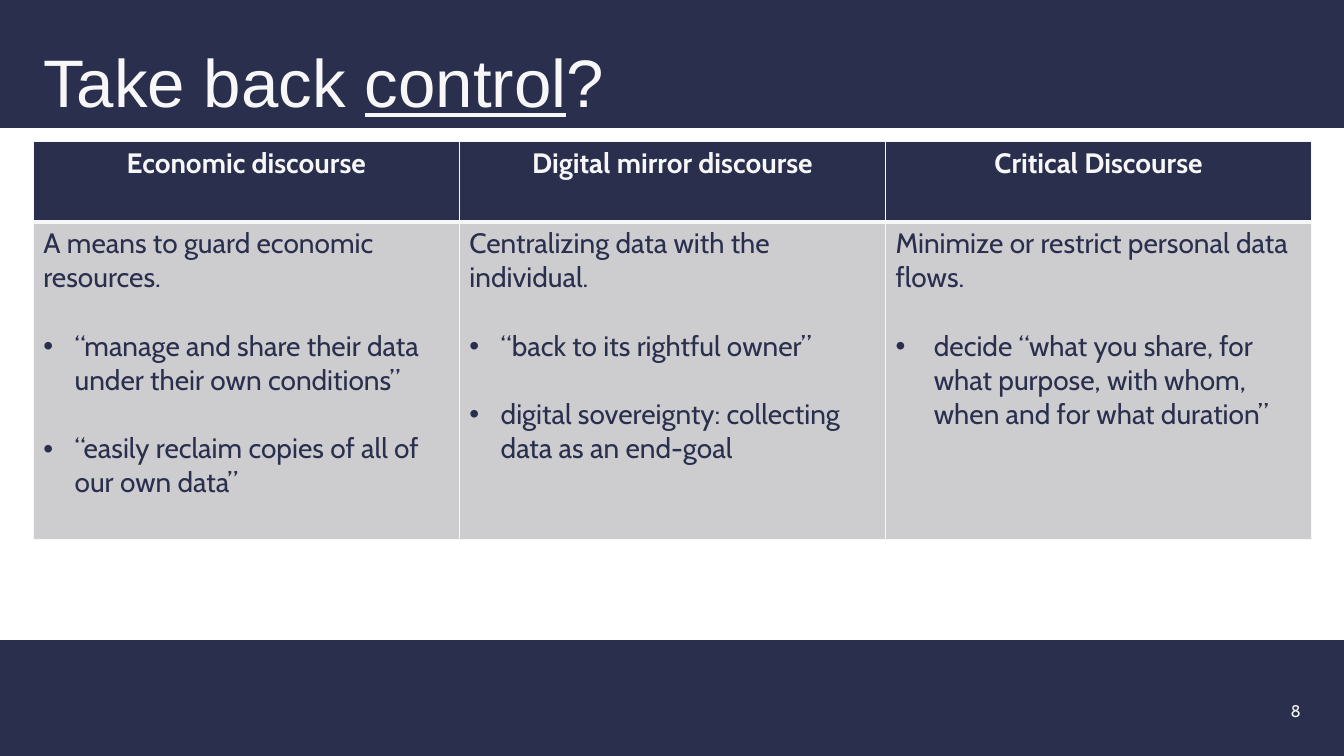
from lxml import etree
from pptx import Presentation
from pptx.dml.color import RGBColor
from pptx.enum.shapes import MSO_SHAPE as Shape
from pptx.enum.text import MSO_ANCHOR as Anchor, MSO_AUTO_SIZE as AutoSize, PP_ALIGN as Align
from pptx.oxml.ns import qn
from pptx.util import Inches, Pt

COLOURS = {"navy": "292F4D", "light": "F7F7F7", "grey": "CDCDD0"}
WIDTH, HEIGHT = 13.33, 7.5
DISCOURSES = [
    ("Economic discourse", "A means to guard economic resources.", 0.31,
     ["“manage and share their data under their own conditions”",
      "“easily reclaim copies of all of our own data”"]),
    ("Digital mirror discourse", "Centralizing data with the individual.", 0.31,
     ["“back to its rightful owner”",
      "digital sovereignty: collecting data as an end-goal"]),
    ("Critical Discourse", "Minimize or restrict personal data flows.", 0.38,
     ["decide “what you share, for what purpose, with whom, when and for what duration”"]),
]


def colour(name):
    return RGBColor.from_string(COLOURS[name])


def style_font(para, size, tint, name="Cabin", bold=False):
    font = para.font
    font.name, font.size, font.bold = name, Pt(size), bold
    font.color.rgb = colour(tint)


def place(box, left, top, width, height):
    box.left, box.top = Inches(left), Inches(top)
    box.width, box.height = Inches(width), Inches(height)


def add_band(page, top, height):
    band = page.shapes.add_shape(
        Shape.RECTANGLE, 0, Inches(top), Inches(WIDTH), Inches(height))
    band.shadow.inherit = False
    band.fill.solid()
    band.fill.fore_color.rgb = colour("navy")
    band.line.fill.background()


def add_title(page):
    title = page.shapes.title
    title._element.getparent().append(title._element)
    place(title, 0.33, 0.19, 12.09, 1.07)
    frame = title.text_frame
    frame.auto_size = AutoSize.NONE
    frame.word_wrap = True
    frame.vertical_anchor = Anchor.BOTTOM
    para = frame.paragraphs[0]
    para.alignment = Align.LEFT
    para.line_spacing = 0.9
    style_font(para, 48, "light", "Arial")
    for text, underlined in [("Take back ", False), ("control", True), ("?", False)]:
        span = para.add_run()
        span.text = text
        span.font.underline = underlined


def add_page_number(page, number):
    box = page.shapes.add_textbox(
        Inches(12.3), Inches(6.78), Inches(0.7), Inches(0.42))
    frame = box.text_frame
    frame.word_wrap = True
    frame.vertical_anchor = Anchor.BOTTOM
    para = frame.paragraphs[0]
    para.text = number
    para.alignment = Align.RIGHT
    style_font(para, 12, "light")


def add_bullet(para, indent):
    properties = para._p.get_or_add_pPr()
    properties.set("marL", str(Inches(indent)))
    properties.set("indent", str(-Inches(indent)))
    etree.SubElement(properties, qn("a:buFont"), typeface="Arial")
    etree.SubElement(properties, qn("a:buChar"), char="•")


def style_cell(cell, fill, bottom):
    properties = cell._tc.get_or_add_tcPr()
    for side, width in [("L", 1), ("R", 1), ("T", 1), ("B", bottom)]:
        line = etree.SubElement(properties, qn("a:ln" + side), w=str(Pt(width)))
        paint = etree.SubElement(line, qn("a:solidFill"))
        etree.SubElement(paint, qn("a:srgbClr"), val=COLOURS["light"])
    cell.fill.solid()
    cell.fill.fore_color.rgb = colour(fill)


def fill_heading(cell, heading):
    style_cell(cell, "navy", 3)
    para = cell.text_frame.paragraphs[0]
    para.text = heading
    para.alignment = Align.CENTER
    style_font(para, 20, "light", bold=True)


def fill_body(cell, summary, indent, points):
    style_cell(cell, "grey", 1)
    para = cell.text_frame.paragraphs[0]
    para.text = summary
    style_font(para, 20, "navy")
    for point in points:
        para = cell.text_frame.add_paragraph()
        para.text = point
        add_bullet(para, indent)
        para.space_before = Pt(24.3)
        style_font(para, 20, "navy")


def add_discourse_table(page):
    table = page.shapes.add_table(
        2, len(DISCOURSES), Inches(0.33), Inches(1.4), Inches(12.68), Inches(3.95)).table
    table.horz_banding = False
    for row, height in zip(table.rows, (0.8, 3.15)):
        row.height = Inches(height)
    for column, (heading, summary, indent, points) in enumerate(DISCOURSES):
        fill_heading(table.cell(0, column), heading)
        fill_body(table.cell(1, column), summary, indent, points)


def main():
    deck = Presentation()
    deck.slide_width, deck.slide_height = Inches(WIDTH), Inches(HEIGHT)
    page = deck.slides.add_slide(deck.slide_layouts[5])
    add_band(page, 6.35, 1.15)
    add_band(page, 0, 1.27)
    add_title(page)
    add_page_number(page, "8")
    add_discourse_table(page)
    deck.save("out.pptx")


if __name__ == "__main__":
    main()
